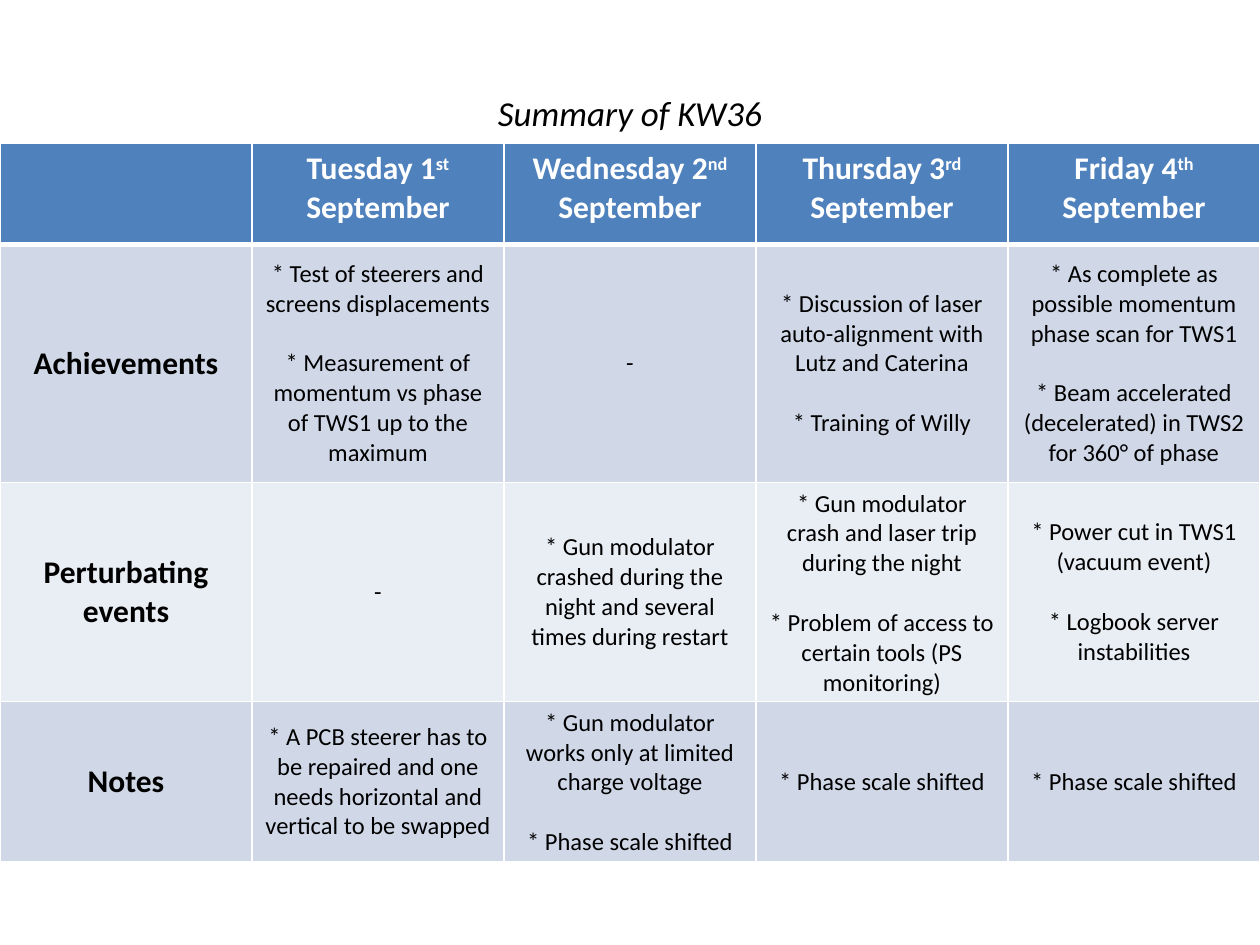
from lxml import etree
from pptx import Presentation
from pptx.dml.color import RGBColor
from pptx.enum.text import MSO_ANCHOR, PP_ALIGN
from pptx.oxml.ns import qn
from pptx.util import Inches, Pt

CENTER = PP_ALIGN.CENTER
TOP = MSO_ANCHOR.TOP
MIDDLE = MSO_ANCHOR.MIDDLE
FONT = "Calibri"
COLORS = {
    "header": "4F81BD",
    "odd": "D0D8E8",
    "even": "E9EDF4",
    "light": "FFFFFF",
    "dark": "000000",
}
SLIDE_WIDTH, SLIDE_HEIGHT = 10, 7.5
TABLE_TOP, TABLE_HEIGHT = 1.14, 5.69
ROW_HEIGHTS = [0.8, 1.89, 1.49, 1.18]
DAYS = [("Tuesday 1", "st"), ("Wednesday 2", "nd"), ("Thursday 3", "rd"), ("Friday 4", "th")]
ROWS = [
    ("Achievements", [
        ["* Test of steerers and screens displacements",
         "* Measurement of momentum vs phase of TWS1 up to the maximum"],
        ["-"],
        ["* Discussion of laser auto-alignment with Lutz and Caterina",
         "* Training of Willy"],
        ["* As complete as possible momentum phase scan for TWS1",
         "* Beam accelerated (decelerated) in TWS2 for 360° of phase"],
    ]),
    ("Perturbating events", [
        ["-"],
        ["* Gun modulator crashed during the night and several times during restart"],
        ["* Gun modulator crash and laser trip during the night",
         "* Problem of access to certain tools (PS monitoring)"],
        ["* Power cut in TWS1 (vacuum event)",
         "* Logbook server instabilities"],
    ]),
    ("Notes", [
        ["* A PCB steerer has to be repaired and one needs horizontal and vertical to be swapped"],
        ["* Gun modulator works only at limited charge voltage",
         "* Phase scale shifted"],
        ["* Phase scale shifted"],
        ["* Phase scale shifted"],
    ]),
]


def style_paragraph(paragraph, size, color, bold=False, italic=False):
    """Centre a paragraph and set its font."""
    paragraph.alignment = CENTER
    font = paragraph.font
    font.name, font.size = FONT, Pt(size)
    font.bold, font.italic = bold, italic
    font.color.rgb = RGBColor.from_string(COLORS[color])


def add_title(slide, text):
    """Add the italic title across the slide."""
    box = slide.shapes.add_textbox(0, Inches(0.68), Inches(SLIDE_WIDTH), Inches(0.44))
    box.text_frame.word_wrap = True
    paragraph = box.text_frame.paragraphs[0]
    paragraph.text = text
    style_paragraph(paragraph, 20, "dark", italic=True)


def format_cell(cell, fill, anchor, top=1, bottom=1):
    """Set the fill, anchor and white borders of a cell."""
    cell.fill.solid()
    cell.fill.fore_color.rgb = RGBColor.from_string(COLORS[fill])
    cell.vertical_anchor = anchor
    properties = cell._tc.get_or_add_tcPr()
    widths = {"a:lnL": 1, "a:lnR": 1, "a:lnT": top, "a:lnB": bottom}
    for index, (tag, width) in enumerate(widths.items()):
        line = etree.Element(qn(tag), w=str(Pt(width)))
        solid = etree.SubElement(line, qn("a:solidFill"))
        etree.SubElement(solid, qn("a:srgbClr"), val=COLORS["light"])
        properties.insert(index, line)


def write_day(cell, day, suffix):
    """Write a date heading with a raised suffix."""
    paragraph = cell.text_frame.paragraphs[0]
    style_paragraph(paragraph, 18, "light", bold=True)
    for text in (day, suffix, " September"):
        run = paragraph.add_run()
        run.text = text
        if text == suffix:
            run._r.get_or_add_rPr().set("baseline", "30000")


def write_items(cell, items, size, bold=False):
    """Write items as paragraphs one line apart."""
    frame = cell.text_frame
    for index, item in enumerate(items):
        paragraph = frame.add_paragraph() if index else frame.paragraphs[0]
        paragraph.text = item
        style_paragraph(paragraph, size, "dark", bold)
        if index:
            paragraph.space_before = Pt(size * 1.22)


def add_summary_table(slide):
    """Add the table of days against topics."""
    frame = slide.shapes.add_table(
        len(ROW_HEIGHTS), len(DAYS) + 1, 0, Inches(TABLE_TOP),
        Inches(SLIDE_WIDTH), Inches(TABLE_HEIGHT))
    table = frame.table
    for row, height in zip(table.rows, ROW_HEIGHTS):
        row.height = Inches(height)
    frame.height = Inches(TABLE_HEIGHT)
    for cell in table.rows[0].cells:
        format_cell(cell, "header", TOP, bottom=3)
    for column, (day, suffix) in enumerate(DAYS, 1):
        write_day(table.cell(0, column), day, suffix)
    for row, (topic, entries) in enumerate(ROWS, 1):
        for column, items in enumerate([[topic], *entries]):
            cell = table.cell(row, column)
            format_cell(cell, "odd" if row % 2 else "even", MIDDLE, top=3 if row == 1 else 1)
            is_topic = column == 0
            write_items(cell, items, 18 if is_topic else 14, bold=is_topic)


def main():
    """Build and save the weekly summary."""
    presentation = Presentation()
    presentation.slide_width = Inches(SLIDE_WIDTH)
    presentation.slide_height = Inches(SLIDE_HEIGHT)
    slide = presentation.slides.add_slide(presentation.slide_layouts[6])
    add_title(slide, "Summary of KW36")
    add_summary_table(slide)
    presentation.save("out.pptx")


if __name__ == "__main__":
    main()
